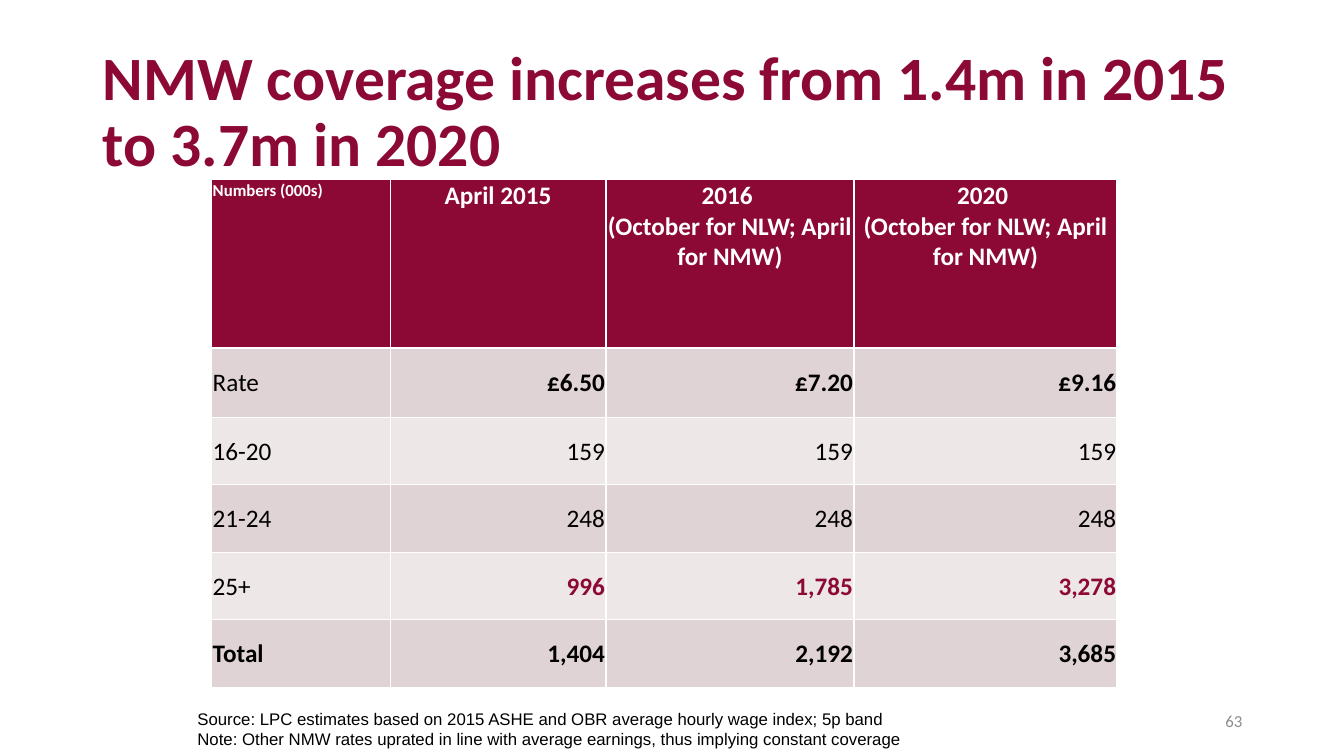
from dataclasses import dataclass

from lxml import etree
from pptx import Presentation
from pptx.dml.color import RGBColor
from pptx.enum.text import MSO_ANCHOR, MSO_AUTO_SIZE, PP_ALIGN
from pptx.oxml.ns import qn
from pptx.slide import Slide
from pptx.table import _Cell
from pptx.text.text import TextFrame
from pptx.util import Inches, Pt

LEFT, CENTER, RIGHT = PP_ALIGN.LEFT, PP_ALIGN.CENTER, PP_ALIGN.RIGHT
TOP, MIDDLE = MSO_ANCHOR.TOP, MSO_ANCHOR.MIDDLE
NO_FIT = MSO_AUTO_SIZE.NONE
TITLE_ONLY = 5


@dataclass(frozen=True)
class Theme:
    wine: str = "8C0935"
    white: str = "FFFFFF"
    black: str = "000000"
    grey: str = "8C8C8C"
    bands: tuple[str, str] = ("E0D3D5", "EEE7E8")
    font: str = "Calibri"
    note_font: str = "Arial"
    title: int = 44
    body: int = 18
    small: int = 12
    line: float = 1
    head_line: float = 1.5


THEME = Theme()


@dataclass(frozen=True)
class Style:
    size: int = THEME.body
    color: str = THEME.black
    bold: bool = False
    align: PP_ALIGN = LEFT
    font: str = THEME.font


@dataclass(frozen=True)
class Row:
    label: str
    values: tuple[str, str, str]
    height: float = 0.67
    bold: bool = False
    total: bool = False
    color: str = THEME.black


@dataclass(frozen=True)
class Note:
    text: str
    box: tuple[float, float, float, float]
    style: Style
    anchor: MSO_ANCHOR = TOP


HEADS = (
    "Numbers (000s)",
    "April 2015",
    "2016 \n(October for NLW; April for NMW)",
    "2020 \n(October for NLW; April for NMW)",
)
HEAD_HEIGHT = 1.67
WIDTHS = (1.77, 2.14, 2.46, 2.61)
ROWS = (
    Row("Rate", ("£6.50", "£7.20", "£9.16"), height=0.69, bold=True),
    Row("16-20", ("159",) * 3),
    Row("21-24", ("248",) * 3),
    Row("25+", ("996", "1,785", "3,278"), bold=True, color=THEME.wine),
    Row("Total", ("1,404", "2,192", "3,685"), bold=True, total=True),
)
NOTES = (
    Note(
        "Source: LPC estimates based on 2015 ASHE and OBR average hourly wage index; 5p band\n"
        "Note: Other NMW rates uprated in line with average earnings, "
        "thus implying constant coverage",
        (1.86, 6.98, 7.24, 0.5),
        Style(THEME.small, font=THEME.note_font),
    ),
    Note("63", (9.42, 6.95, 3, 0.4), Style(THEME.small, THEME.grey, align=RIGHT), MIDDLE),
)


def write(frame: TextFrame, text: str, style: Style) -> None:
    frame.text = text
    for para in frame.paragraphs:
        para.alignment = style.align
        font = para.font
        font.name, font.size, font.bold = style.font, Pt(style.size), style.bold
        font.color.rgb = RGBColor.from_string(style.color)


def add_border(cell: _Cell, side: str, width: float) -> None:
    props = cell._tc.get_or_add_tcPr()
    line = etree.SubElement(props, qn(f"a:ln{side}"), w=str(Pt(width)))
    fill = etree.SubElement(line, qn("a:solidFill"))
    etree.SubElement(fill, qn("a:srgbClr"), val=THEME.white)


def fill_cell(cell: _Cell, text: str, style: Style, fill: str, row: int) -> None:
    """Format one cell; the rule below the header row is thicker."""
    write(cell.text_frame, text, style)
    cell.vertical_anchor = MIDDLE if row else TOP
    cell.margin_left = cell.margin_right = cell.margin_top = Inches(0.01)
    cell.margin_bottom = 0
    top = THEME.head_line if row == 1 else THEME.line
    bottom = THEME.line if row else THEME.head_line
    for side, width in zip("LRTB", (THEME.line, THEME.line, top, bottom)):
        add_border(cell, side, width)
    cell.fill.solid()
    cell.fill.fore_color.rgb = RGBColor.from_string(fill)


def add_title(slide: Slide) -> None:
    title = slide.shapes.title
    title.left, title.top = Inches(0.92), Inches(0.4)
    title.width, title.height = Inches(11.5), Inches(1.45)
    frame = title.text_frame
    write(
        frame,
        "NMW coverage increases from 1.4m in 2015 to 3.7m in 2020",
        Style(THEME.title, THEME.wine, bold=True),
    )
    frame.auto_size, frame.vertical_anchor, frame.word_wrap = NO_FIT, MIDDLE, True
    frame.paragraphs[0].line_spacing = 0.9


def add_grid(slide: Slide) -> None:
    heights = (HEAD_HEIGHT, *(row.height for row in ROWS))
    table = slide.shapes.add_table(
        len(heights), len(WIDTHS), Inches(2.1), Inches(1.78),
        Inches(sum(WIDTHS)), Inches(sum(heights)),
    ).table
    table.first_row = table.horz_banding = False
    for column, width in zip(table.columns, WIDTHS):
        column.width = Inches(width)
    for line, height in zip(table.rows, heights):
        line.height = Inches(height)
    for col, head in enumerate(HEADS):
        style = Style(
            THEME.body if col else THEME.small, THEME.white, True, CENTER if col else LEFT
        )
        fill_cell(table.cell(0, col), head, style, THEME.wine, 0)
    for index, row in enumerate(ROWS, 1):
        fill = THEME.bands[(index - 1) % 2]
        label = Style(bold=row.total)
        fill_cell(table.cell(index, 0), row.label, label, fill, index)
        value = Style(color=row.color, bold=row.bold, align=RIGHT)
        for col, text in enumerate(row.values, 1):
            fill_cell(table.cell(index, col), text, value, fill, index)


def add_note(slide: Slide, note: Note) -> None:
    frame = slide.shapes.add_textbox(*map(Inches, note.box)).text_frame
    frame.word_wrap, frame.vertical_anchor = True, note.anchor
    write(frame, note.text, note.style)


def main() -> None:
    deck = Presentation()
    deck.slide_width, deck.slide_height = Inches(13.33), Inches(7.5)
    slide = deck.slides.add_slide(deck.slide_layouts[TITLE_ONLY])
    add_title(slide)
    add_grid(slide)
    for note in NOTES:
        add_note(slide, note)
    deck.save("out.pptx")


if __name__ == "__main__":
    main()
